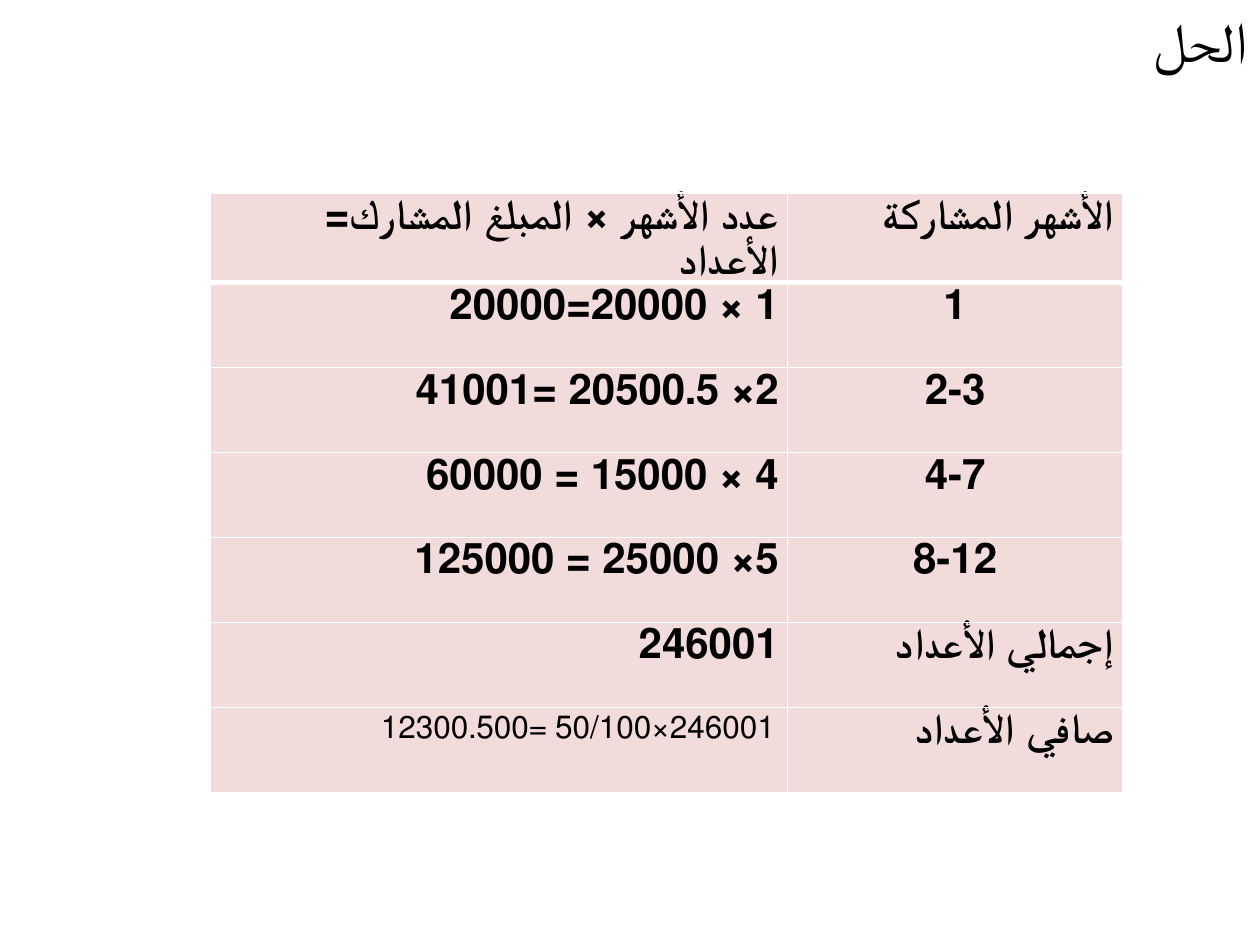
import dataclasses

import lxml.etree
import pptx
import pptx.dml.color
import pptx.enum.text
import pptx.oxml.ns
import pptx.util

Inches = pptx.util.Inches
Pt = pptx.util.Pt
qn = pptx.oxml.ns.qn
Align = pptx.enum.text.PP_ALIGN


@dataclasses.dataclass(frozen=True)
class Theme:
    font: str = "Calibri"
    text: str = "000000"
    cell_fill: str = "F2DCDB"
    border: str = "FFFFFF"
    heading_size: int = 32
    cell_size: int = 24
    note_size: int = 18
    thin: int = 1
    thick: int = 3


THEME = Theme()

ROWS = [
    ("عدد الأشهر × المبلغ المشارك= الأعداد", "الأشهر المشاركة"),
    ("1 × 20000=20000", "1"),
    ("2× 20500.5 =41001", "2-3"),
    ("4 × 15000 = 60000", "4-7"),
    ("5× 25000 = 125000", "8-12"),
    ("246001", "إجمالي الأعداد"),
    ("246001×50/100 =12300.500", "صافي الأعداد"),
]
COLUMN_SHARES = (4.58, 2.66)


def format_paragraph(paragraph, size, bold, alignment=Align.RIGHT):
    paragraph.alignment = alignment
    paragraph._p.get_or_add_pPr().set("rtl", "1")
    for run in paragraph.runs:
        run.font.name = THEME.font
        run.font.size = Pt(size)
        run.font.bold = bold
        run.font.color.rgb = pptx.dml.color.RGBColor.from_string(THEME.text)


def set_borders(cell, top, bottom):
    properties = cell._tc.get_or_add_tcPr()
    widths = {"a:lnL": THEME.thin, "a:lnR": THEME.thin, "a:lnT": top, "a:lnB": bottom}
    for position, (tag, width) in enumerate(widths.items()):
        line = lxml.etree.Element(qn(tag), w=str(Pt(width)))
        fill = lxml.etree.SubElement(line, qn("a:solidFill"))
        lxml.etree.SubElement(fill, qn("a:srgbClr"), val=THEME.border)
        properties.insert(position, line)


def place_heading(slide, left, top, width, height):
    body = slide.placeholders[1]
    body.left, body.top, body.width, body.height = left, top, width, height
    body.text_frame.text = "الحل"
    paragraph = body.text_frame.paragraphs[0]
    format_paragraph(paragraph, THEME.heading_size, False)
    properties = paragraph._p.get_or_add_pPr()
    properties.set("marL", str(Inches(0.38)))
    properties.set("indent", str(-Inches(0.38)))
    lxml.etree.SubElement(properties, qn("a:buNone"))


def fill_cell(cell, text, is_note, alignment):
    cell.fill.solid()
    cell.fill.fore_color.rgb = pptx.dml.color.RGBColor.from_string(THEME.cell_fill)
    cell.text_frame.text = text
    paragraph = cell.text_frame.paragraphs[0]
    if is_note:
        format_paragraph(paragraph, THEME.note_size, False, alignment)
        return
    cell.margin_left = cell.margin_right = Inches(0.07)
    cell.margin_top = cell.margin_bottom = 0
    format_paragraph(paragraph, THEME.cell_size, True, alignment)
    paragraph.line_spacing = 1.07
    paragraph.space_after = Pt(8)


def place_table(slide, left, top, width, height):
    frame = slide.shapes.add_table(len(ROWS), len(COLUMN_SHARES), left, top, width, height)
    table = frame.table
    for column, share in zip(table.columns, COLUMN_SHARES):
        column.width = int(width * share / sum(COLUMN_SHARES))
    last_row = len(ROWS) - 1
    for row_index, texts in enumerate(ROWS):
        for column_index, text in enumerate(texts):
            cell = table.cell(row_index, column_index)
            is_month = column_index == 1 and 1 <= row_index <= 4
            is_note = row_index == last_row and column_index == 0
            fill_cell(cell, text, is_note, Align.CENTER if is_month else Align.RIGHT)
            set_borders(
                cell,
                THEME.thick if row_index == 1 else THEME.thin,
                THEME.thick if row_index == 0 else THEME.thin,
            )


def main():
    presentation = pptx.Presentation()
    presentation.slide_width = Inches(10)
    presentation.slide_height = Inches(7.5)
    slide = presentation.slides.add_slide(presentation.slide_layouts[1])
    title = slide.shapes.title
    title.element.getparent().remove(title.element)
    place_heading(slide, 0, 0, Inches(10), Inches(6.7))
    place_table(slide, Inches(1.67), Inches(1.53), Inches(7.24), Inches(4.72))
    presentation.save("out.pptx")


if __name__ == "__main__":
    main()
